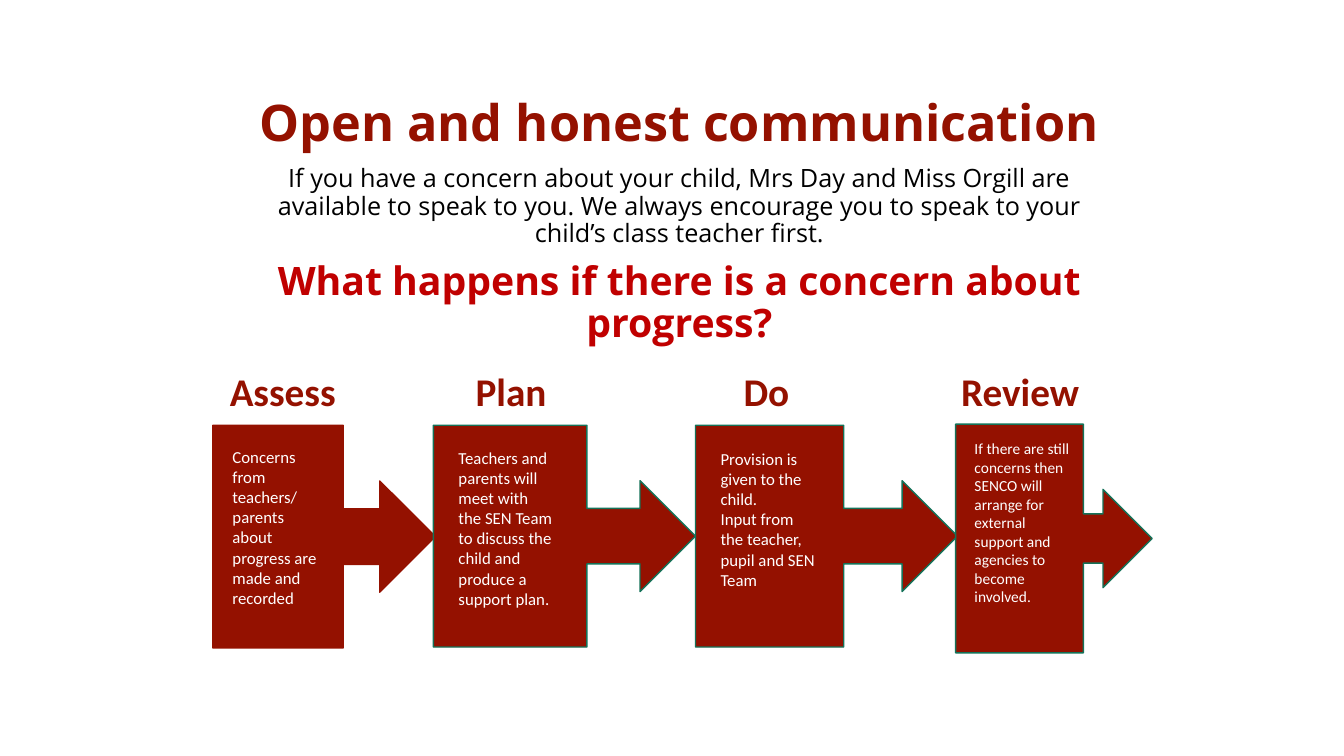
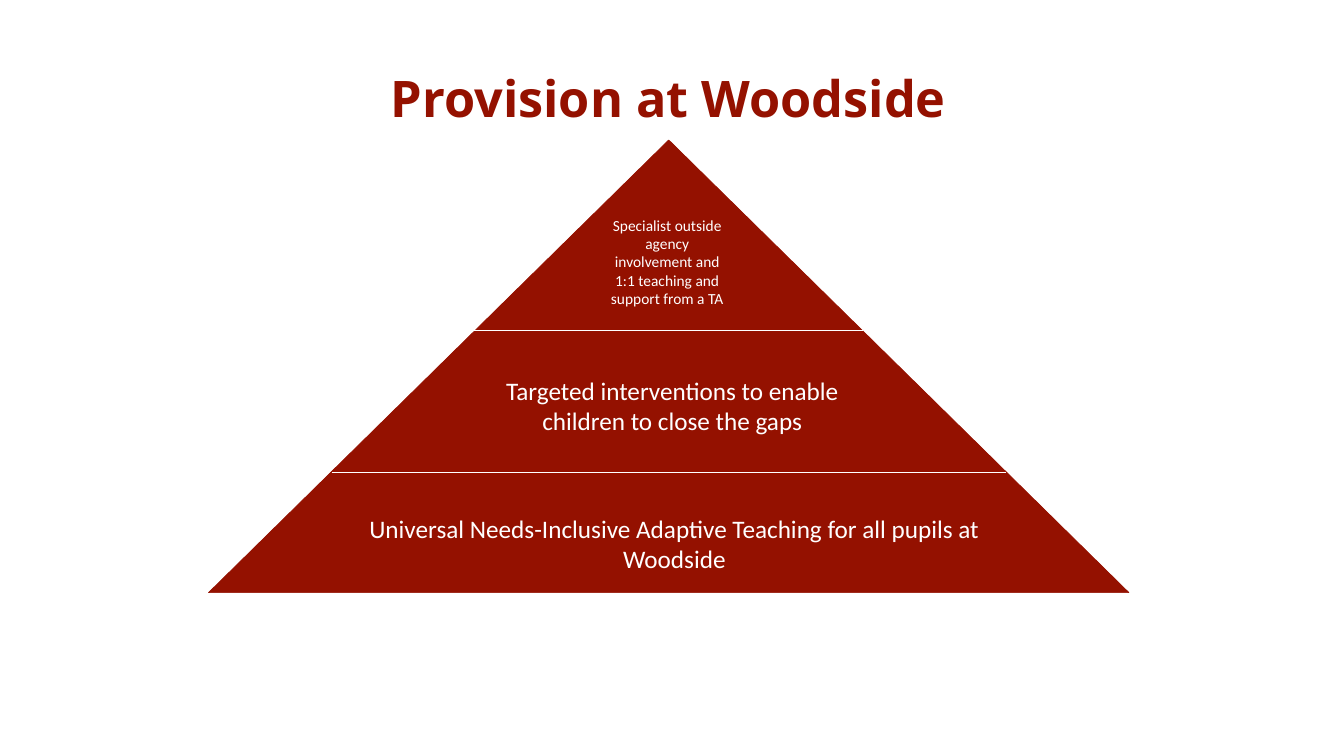
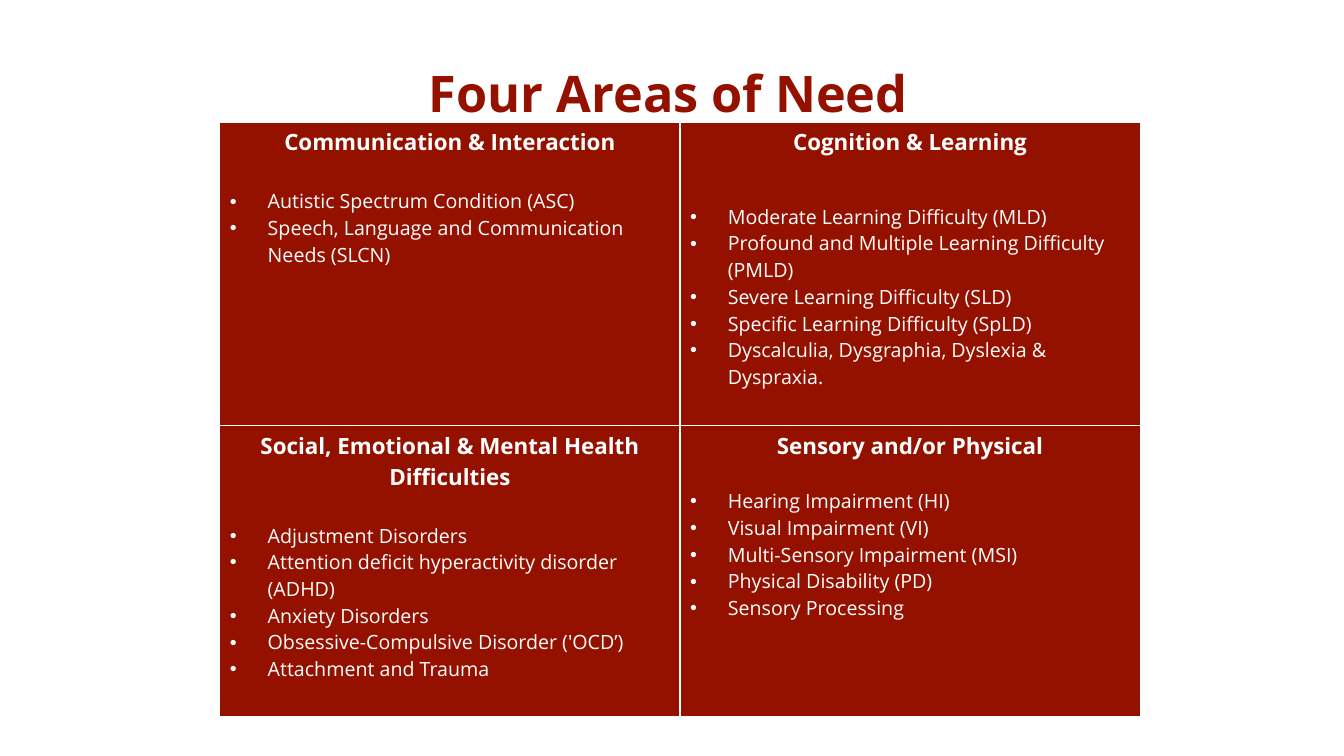
from lxml import etree
from pptx import Presentation
from pptx.dml.color import RGBColor
from pptx.enum.shapes import MSO_CONNECTOR, MSO_SHAPE
from pptx.enum.text import PP_ALIGN
from pptx.oxml.ns import qn
from pptx.util import Pt

LEFT, MID = PP_ALIGN.LEFT, PP_ALIGN.CENTER
ARROW = MSO_SHAPE.RIGHT_ARROW_CALLOUT
PEAK = MSO_SHAPE.ISOSCELES_TRIANGLE
LINE = MSO_CONNECTOR.STRAIGHT

RED = RGBColor(0x94, 0x11, 0x00)
BRIGHT = RGBColor(0xC0, 0x00, 0x00)
GREEN = RGBColor(0x15, 0x72, 0x59)
WHITE = RGBColor(0xFF, 0xFF, 0xFF)
BLACK = RGBColor(0x00, 0x00, 0x00)
HEAD, BODY = "Open Sans", "Calibri"
INDENT = Pt(27)

# label, label box, arrow box, box share, edge, note box, size, paragraphs
STEPS = [
    ("Assess", (154.8, 258.5, 94.3, 41), (152, 303.8, 159, 159), 0.586, RED,
     (159, 315.4, 79.2, 123.8), 12,
     ["Concerns from teachers/",
      "parents about progress are made and recorded"]),
    ("Plan", (326.9, 258.5, 76.3, 41), (309.6, 303.8, 187.2, 158.4), 0.586,
     GREEN, (320.4, 316, 82.8, 123.8), 12,
     ["Teachers and parents will meet with the SEN Team to discuss the child "
      "and produce a support plan."]),
    ("Do", (523.4, 258.5, 48.2, 41), (496.8, 303.8, 187.2, 158.4), 0.566,
     GREEN, (507.6, 316.8, 82.8, 108.7), 12,
     ["Provision is given to the child.", "Input from the teacher,",
      "pupil and SEN Team"]),
    ("Review", (676.8, 258.5, 103.7, 41), (682.6, 303, 140.4, 163.4), 0.65,
     GREEN, (689, 310.3, 82.8, 127.4), 11,
     ["If there are still concerns then SENCO will arrange for external "
      "support and agencies to become involved."]),
]

TIERS = [
    ("Specialist outside agency involvement and 1:1 teaching and support "
     "from a TA", (428.4, 150.5, 96.5, 74.2), 11),
    ("Targeted interventions to enable children to close the gaps",
     (338.4, 264.2, 283.7, 51), 18),
    ("Universal Needs-Inclusive Adaptive Teaching for all pupils at Woodside",
     (254.9, 362.9, 453.6, 51), 18),
]
RULES = [(338.4, 616.3, 236.2), (236.9, 718.6, 337.7)]

# heading, gap below it, bullets
AREAS = [
    [("Communication & Interaction", 21.8,
      ["Autistic Spectrum Condition (ASC)",
       "Speech, Language and Communication Needs (SLCN)"]),
     ("Cognition & Learning", 32.7,
      ["Moderate Learning Difficulty (MLD)",
       "Profound and Multiple Learning Difficulty (PMLD)",
       "Severe Learning Difficulty (SLD)",
       "Specific Learning Difficulty (SpLD)",
       "Dyscalculia, Dysgraphia, Dyslexia & Dyspraxia."])],
    [("Social, Emotional & Mental Health Difficulties", 21.8,
      ["Adjustment Disorders",
       "Attention deficit hyperactivity disorder (ADHD)",
       "Anxiety Disorders",
       "Obsessive-Compulsive Disorder ('OCD’)",
       "Attachment and Trauma"]),
     ("Sensory and/or Physical", 19,
      ["Hearing Impairment (HI)",
       "Visual Impairment (VI)",
       "Multi-Sensory Impairment (MSI)",
       "Physical Disability (PD)",
       "Sensory Processing"])],
]


def pts(box):
    return [Pt(v) for v in box]


def write(frame, text, size=12, font=BODY, color=WHITE, bold=False,
          align=LEFT, lead=1.0, gap=0, dot=False):
    """Add one paragraph, filling the empty first one if there is one."""
    para = frame.paragraphs[0]
    if para.runs:
        para = frame.add_paragraph()
    para.alignment = align
    para.line_spacing = lead
    para.space_before = Pt(gap)
    run = para.add_run()
    run.text = text
    run.font.name = font
    run.font.size = Pt(size)
    run.font.bold = bold
    run.font.color.rgb = color
    if dot:
        props = para._p.get_or_add_pPr()
        props.set("marL", str(INDENT))
        props.set("indent", str(-INDENT))
        etree.SubElement(props, qn("a:buFont"), typeface="Arial")
        etree.SubElement(props, qn("a:buChar"), char="•")


def add_box(slide, box, fill=None, wrap=True):
    """Add a text box and return its frame."""
    shape = slide.shapes.add_textbox(*pts(box))
    if fill is not None:
        shape.fill.solid()
        shape.fill.fore_color.rgb = fill
    shape.text_frame.word_wrap = wrap
    return shape.text_frame


def add_form(slide, kind, box, edge=RED, width=1):
    form = slide.shapes.add_shape(kind, *pts(box))
    form.shadow.inherit = False
    form.fill.solid()
    form.fill.fore_color.rgb = RED
    form.line.color.rgb = edge
    form.line.width = Pt(width)
    return form


def add_rule(slide, x1, x2, y):
    rule = slide.shapes.add_connector(LINE, *pts((x1, y, x2, y)))
    rule.line.color.rgb = WHITE
    rule.line.width = Pt(1)
    etree.SubElement(rule._element.spPr, qn("a:effectLst"))


def add_title(slide, text, box=(174, 49, 607, 397), lead=0.9):
    frame = add_box(slide, box)
    write(frame, text, size=36, font=HEAD, color=RED, bold=True, align=MID,
          lead=lead, gap=10)
    return frame


def edge_cell(cell):
    """Draw white borders and a red fill."""
    props = cell._tc.get_or_add_tcPr()
    for side in "LRTB":
        line = etree.SubElement(props, qn("a:ln" + side), w=str(Pt(1)))
        fill = etree.SubElement(line, qn("a:solidFill"))
        etree.SubElement(fill, qn("a:srgbClr"), val=str(WHITE))
    cell.fill.solid()
    cell.fill.fore_color.rgb = RED


def add_areas(slide, box, highs):
    table = slide.shapes.add_table(2, 2, *pts(box)).table
    table.first_row = table.horz_banding = False
    for row, high, areas in zip(table.rows, highs, AREAS):
        row.height = Pt(high)
        for cell, (head, gap, items) in zip(row.cells, areas):
            edge_cell(cell)
            frame = cell.text_frame
            write(frame, head, size=16, font=HEAD, bold=True, align=MID)
            for i, item in enumerate(items):
                write(frame, item, size=14, font=HEAD, dot=True,
                      gap=0 if i else gap)


def talk_slide(slide):
    frame = add_title(slide, "Open and honest communication",
                      (173.5, 66.2, 623.5, 397))
    write(frame, "If you have a concern about your child, Mrs Day and Miss "
          "Orgill are available to speak to you. We always encourage you to "
          "speak to your child’s class teacher first.",
          size=18, font=HEAD, color=BLACK, align=MID, lead=0.9, gap=10)
    write(frame, "What happens if there is a concern about progress?",
          size=28, font=HEAD, color=BRIGHT, bold=True, align=MID, lead=0.9,
          gap=10)
    for label, top, box, share, edge, area, size, lines in STEPS:
        form = add_form(slide, ARROW, box, edge)
        form.adjustments[3] = share
        write(add_box(slide, top, wrap=False), label, size=28, color=RED,
              bold=True, align=MID)
        note = add_box(slide, area)
        for line in lines:
            write(note, line, size=size)


def tier_slide(slide):
    add_title(slide, "Provision at Woodside")
    add_form(slide, PEAK, (149, 100, 657.4, 323.3), width=0.5)
    for rule in RULES:
        add_rule(slide, *rule)
    for text, box, size in TIERS:
        write(add_box(slide, box, fill=RED), text, size=size, align=MID)


def need_slide(slide):
    add_title(slide, "Four Areas of Need", lead=0.8)
    add_areas(slide, (157, 87.1, 657.4, 425), (217, 208))


def main():
    deck = Presentation()
    deck.slide_width, deck.slide_height = Pt(960), Pt(540)
    for build in (talk_slide, tier_slide, need_slide):
        build(deck.slides.add_slide(deck.slide_layouts[6]))
    deck.save("out.pptx")


if __name__ == "__main__":
    main()
